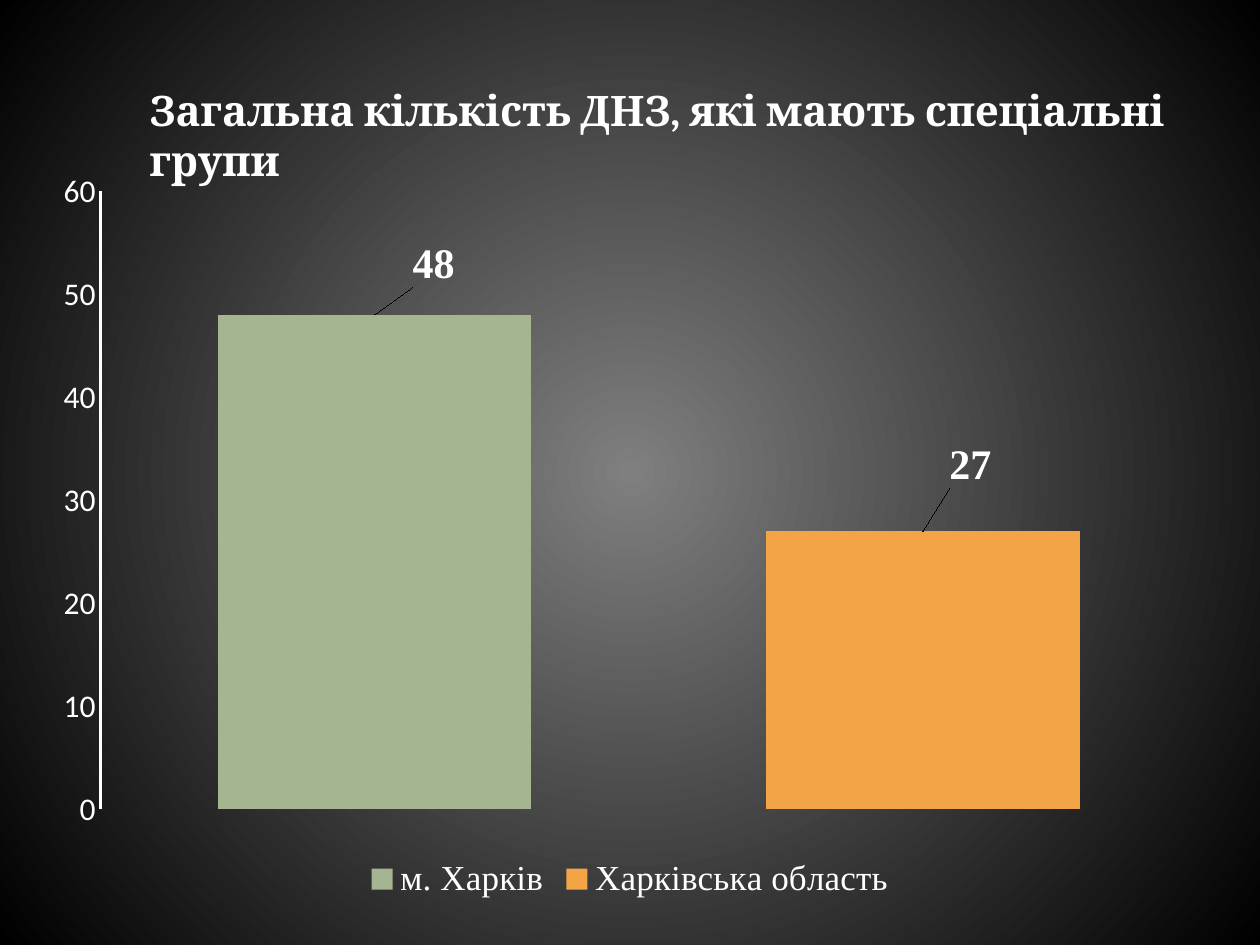
from pptx import Presentation
from pptx.chart.data import CategoryChartData
from pptx.dml.color import RGBColor
from pptx.enum.chart import XL_CHART_TYPE as CT, XL_LABEL_POSITION as LP
from pptx.enum.chart import XL_LEGEND_POSITION as LG, XL_TICK_MARK as TM
from pptx.enum.text import MSO_AUTO_SIZE as AS
from pptx.oxml import parse_xml
from pptx.oxml.ns import nsdecls, qn
from pptx.util import Inches, Pt

WHITE = "FFFFFF"
TITLE = {"name": "Cambria", "size": Pt(24), "bold": True}
BASE = {"name": "Calibri", "size": Pt(18)}
LEGEND = {"name": "Times New Roman", "size": Pt(20)}
LABEL = {"name": "Times New Roman", "size": Pt(24), "bold": True}


def rgb(value):
    return RGBColor.from_string(value)


def layout(inner=False, **sizes):
    target = '<c:layoutTarget val="inner"/>' if inner else ""
    modes = '<c:xMode val="edge"/><c:yMode val="edge"/>' if inner else ""
    values = "".join(f'<c:{k} val="{v}"/>' for k, v in sizes.items())
    return parse_xml(f'<c:layout {nsdecls("c")}><c:manualLayout>{target}{modes}{values}'
                     "</c:manualLayout></c:layout>")


class Deck:
    def __init__(self, width, height):
        self.prs = Presentation()
        self.prs.slide_width, self.prs.slide_height = Inches(width), Inches(height)
        self.s = self.prs.slides.add_slide(self.prs.slide_layouts[6])

    def style(self, font, formats):
        for key, value in formats.items():
            setattr(font, key, value)
        font.color.rgb = rgb(WHITE)

    def background(self, *colors):
        fill = self.s.background.fill
        fill.gradient()
        for stop, position, color in zip(fill.gradient_stops, (0, 1), colors):
            stop.position = position
            stop.color.rgb = rgb(color)
        lin = next(self.s.element.iter(qn("a:lin")))
        lin.getparent().replace(lin, parse_xml(
            f'<a:path {nsdecls("a")} path="circle">'
            '<a:fillToRect l="50000" t="50000" r="50000" b="50000"/></a:path>'))

    def text(self, box, text, formats):
        tf = self.s.shapes.add_textbox(*map(Inches, box)).text_frame
        tf.word_wrap = True
        tf.auto_size = AS.SHAPE_TO_FIT_TEXT
        r = tf.paragraphs[0].add_run()
        r.text = text
        self.style(r.font, formats)

    def columns(self, box, bars):
        data = CategoryChartData()
        data.categories = [bar[0] for bar in bars]
        data.add_series("Series 1", [bar[1] for bar in bars])
        chart = self.s.shapes.add_chart(CT.COLUMN_CLUSTERED, *map(Inches, box), data).chart
        self.style(chart.font, BASE)
        chart.has_title = False
        chart.has_legend = True
        chart.legend.position = LG.BOTTOM
        chart.legend.include_in_layout = False
        self.style(chart.legend.font, LEGEND)
        chart.category_axis.visible = False
        axis = chart.value_axis
        axis.has_major_gridlines = False
        axis.major_tick_mark = axis.minor_tick_mark = TM.NONE
        axis.minimum_scale, axis.maximum_scale, axis.major_unit = 0, 60, 10
        axis.format.line.color.rgb = rgb(WHITE)
        axis.format.line.width = Pt(1.5)
        plot = chart.plots[0]
        plot.gap_width = 75
        plot.vary_by_categories = True
        for i, (_, _, color, _) in enumerate(bars):
            point = plot.series[0].points[i]
            point.format.fill.solid()
            point.format.fill.fore_color.rgb = rgb(color)
            self.style(point.data_label.font, LABEL)
            point.data_label.position = LP.OUTSIDE_END
        root = chart._chartSpace
        for label, bar in zip(root.iter(qn("c:dLbl")), bars):
            label.insert(1, layout(x=bar[3][0], y=bar[3][1]))
        area = next(root.iter(qn("c:plotArea")))
        for old in area.findall(qn("c:layout")):
            area.remove(old)
        area.insert(0, layout(True, x=0.052, y=0.045, w=0.928, h=0.826))


def main():
    deck = Deck(10, 7.5)
    deck.background("7F7F7F", "000000")
    deck.text((1.09, 0.62, 8.86, 0.5),
              "Загальна кількість ДНЗ, які мають спеціальні групи", TITLE)
    deck.columns((0.31, 1.25, 9.38, 5.94), [
        ("м. Харків", 48, "A5B592", (0.05, -0.03)),
        ("Харківська область", 27, "F3A447", (0.04, -0.05)),
    ])
    deck.prs.save("out.pptx")


if __name__ == "__main__":
    main()
